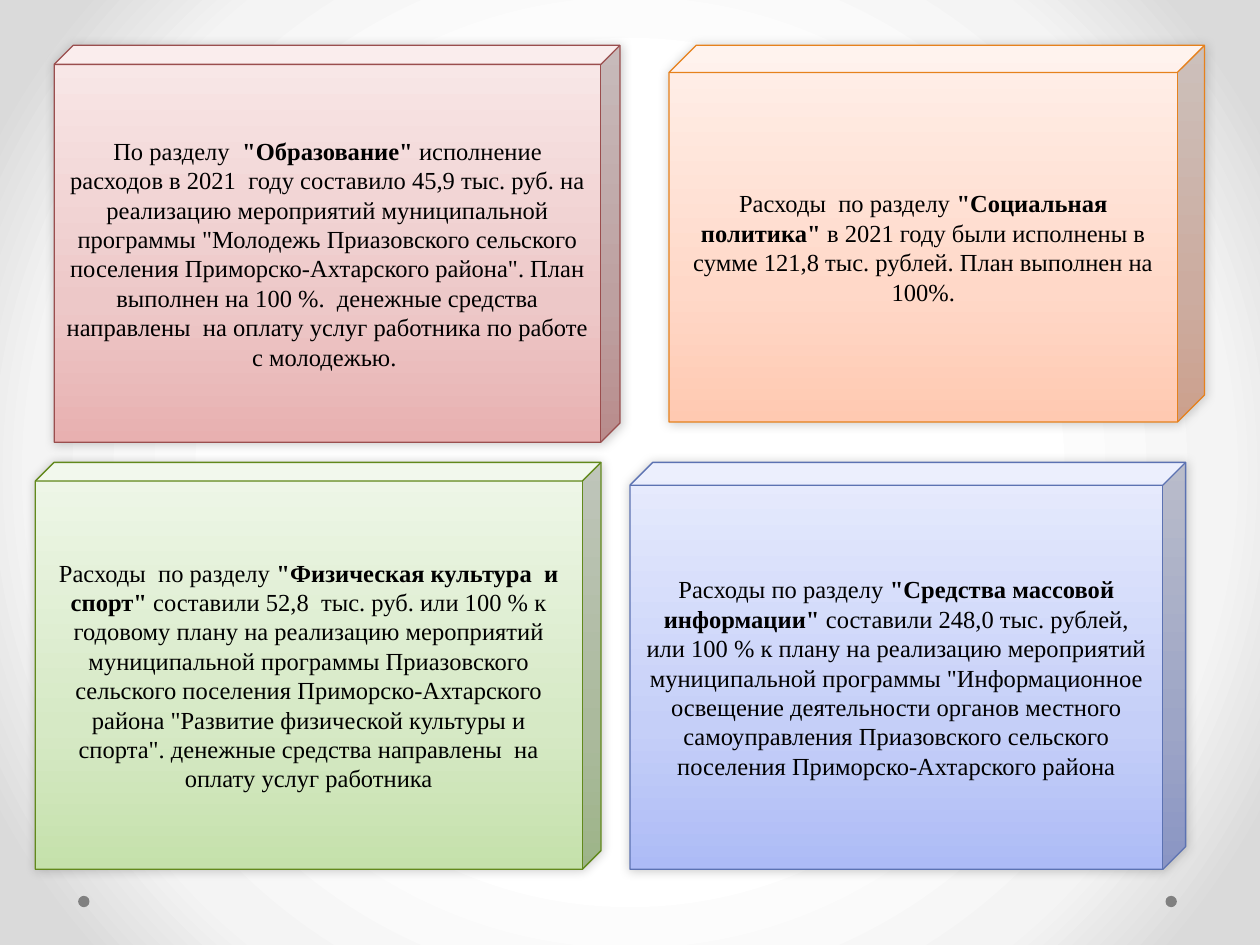
from dataclasses import dataclass

from pptx import Presentation
from pptx.dml.color import RGBColor as RGB
from pptx.enum.shapes import MSO_SHAPE as SHAPE
from pptx.enum.text import MSO_ANCHOR as ANCHOR, PP_ALIGN as ALIGN
from pptx.oxml import parse_xml
from pptx.oxml.ns import nsdecls
from pptx.util import Inches, Pt


@dataclass(frozen=True)
class Theme:
    font: str = "Times New Roman"
    size: float = 14
    text: str = "000000"
    dot: str = "808080"
    line_width: float = 0.75
    backdrop: tuple = ((50, "FFFFFF"), (76, "F4F4F4"), (92, "DADADA"))
    # Each palette: outline, then gradient colours from bottom to top
    red: tuple = ("9A4E4E", "E8B0B0", "EDC8C8", "F9E9E9")
    orange: tuple = ("E6811C", "FFC9B1", "FFD8C8", "FFF0EA")
    green: tuple = ("62891C", "C5E1AB", "D6E9C5", "EFF7E9")
    blue: tuple = ("5C72B2", "ADBBF6", "C5CFF8", "E8ECFD")


UPWARD = '<a:lin ang="16200000" scaled="1"/>'
RADIAL = ('<a:path path="circle"><a:fillToRect l="50000" t="50000" '
          'r="50000" b="50000"/></a:path>')


def set_gradient(solid, stops, direction):
    """Swap a solid fill element for a gradient."""
    marks = "".join(f'<a:gs pos="{pos * 1000}"><a:srgbClr val="{color}"/></a:gs>'
                    for pos, color in stops)
    grad = parse_xml(f'<a:gradFill {nsdecls("a")} rotWithShape="1">'
                     f'<a:gsLst>{marks}</a:gsLst>{direction}</a:gradFill>')
    solid.getparent().replace(solid, grad)


def add_text(p, text, *, font, size, color, bold=False):
    r = p.add_run()
    r.text = text
    r.font.name, r.font.size, r.font.bold = font, Pt(size), bold
    r.font.color.rgb = RGB.from_string(color)


class SlideBuilder:
    def __init__(self, slide, theme):
        self.slide, self.theme = slide, theme

    def background(self):
        self.slide.background.fill.solid()
        solid = self.slide.element.xpath(".//p:bgPr/a:solidFill")[0]
        set_gradient(solid, self.theme.backdrop, RADIAL)

    def shape(self, kind, box, color):
        sp = self.slide.shapes.add_shape(kind, *map(Inches, box))
        sp.shadow.inherit = False
        sp.fill.solid()
        sp.fill.fore_color.rgb = RGB.from_string(color)
        return sp

    def dot(self, left, top, size=0.09):
        sp = self.shape(SHAPE.OVAL, (left, top, size, size), self.theme.dot)
        sp.line.fill.background()

    def block(self, box, depth, palette, parts):
        """Cube with centred text; the middle part is bold."""
        t = self.theme
        outline, *colors = palette
        sp = self.shape(SHAPE.CUBE, box, colors[0])
        sp.adjustments[0] = depth
        sp_pr = sp.element.spPr
        set_gradient(sp_pr.xpath("./a:solidFill")[0],
                     zip((0, 35, 100), colors), UPWARD)
        sp.line.color.rgb = RGB.from_string(outline)
        sp.line.width = Pt(t.line_width)
        # Soft shadow
        sp_pr.xpath("./a:effectLst")[0].append(parse_xml(
            f'<a:outerShdw {nsdecls("a")} blurRad="{Pt(6)}" dist="0" '
            'dir="18900000" rotWithShape="0"><a:srgbClr val="000000">'
            '<a:alpha val="20000"/></a:srgbClr></a:outerShdw>'))
        # Text
        tf = sp.text_frame
        tf.word_wrap, tf.vertical_anchor = True, ANCHOR.MIDDLE
        p = tf.paragraphs[0]
        p.alignment = ALIGN.CENTER
        for i, part in enumerate(parts):
            add_text(p, part, font=t.font, size=t.size, color=t.text, bold=i == 1)


def main():
    prs = Presentation()
    prs.slide_width, prs.slide_height = Inches(10), Inches(7.5)
    theme = Theme()
    page = SlideBuilder(prs.slides.add_slide(prs.slide_layouts[6]), theme)

    # Backdrop and footer dots
    page.background()
    for left in (9.25, 0.62):
        page.dot(left, 7.11)

    # Spending sections
    page.block((0.43, 0.36, 4.49, 3.15), 0.048, theme.red, (
        "По разделу  ", '"Образование"',
        " исполнение расходов в 2021  году составило 45,9 тыс. руб. на "
        'реализацию мероприятий муниципальной программы "Молодежь '
        'Приазовского сельского поселения Приморско-Ахтарского района". План '
        "выполнен на 100 %.  денежные средства направлены  на оплату услуг "
        "работника по работе с молодежью. "))
    page.block((5.31, 0.36, 4.25, 2.99), 0.072, theme.orange, (
        "Расходы  по разделу ", '"Социальная политика"',
        " в 2021 году были исполнены в сумме 121,8 тыс. рублей. План выполнен "
        "на 100%."))
    page.block((0.28, 3.67, 4.49, 3.23), 0.046, theme.green, (
        "Расходы  по разделу ", '"Физическая культура  и спорт"',
        " составили 52,8  тыс. руб. или 100 % к годовому плану на реализацию "
        "мероприятий муниципальной программы Приазовского сельского поселения "
        'Приморско-Ахтарского района "Развитие физической культуры и спорта". '
        "денежные средства направлены  на оплату услуг работника"))
    page.block((5, 3.67, 4.41, 3.23), 0.056, theme.blue, (
        "Расходы по разделу ", '"Средства массовой информации" ',
        "составили 248,0 тыс. рублей, или 100 % к плану на реализацию "
        'мероприятий муниципальной программы "Информационное освещение '
        "деятельности органов местного самоуправления Приазовского сельского "
        "поселения Приморско-Ахтарского района"))

    prs.save("out.pptx")


if __name__ == "__main__":
    main()
